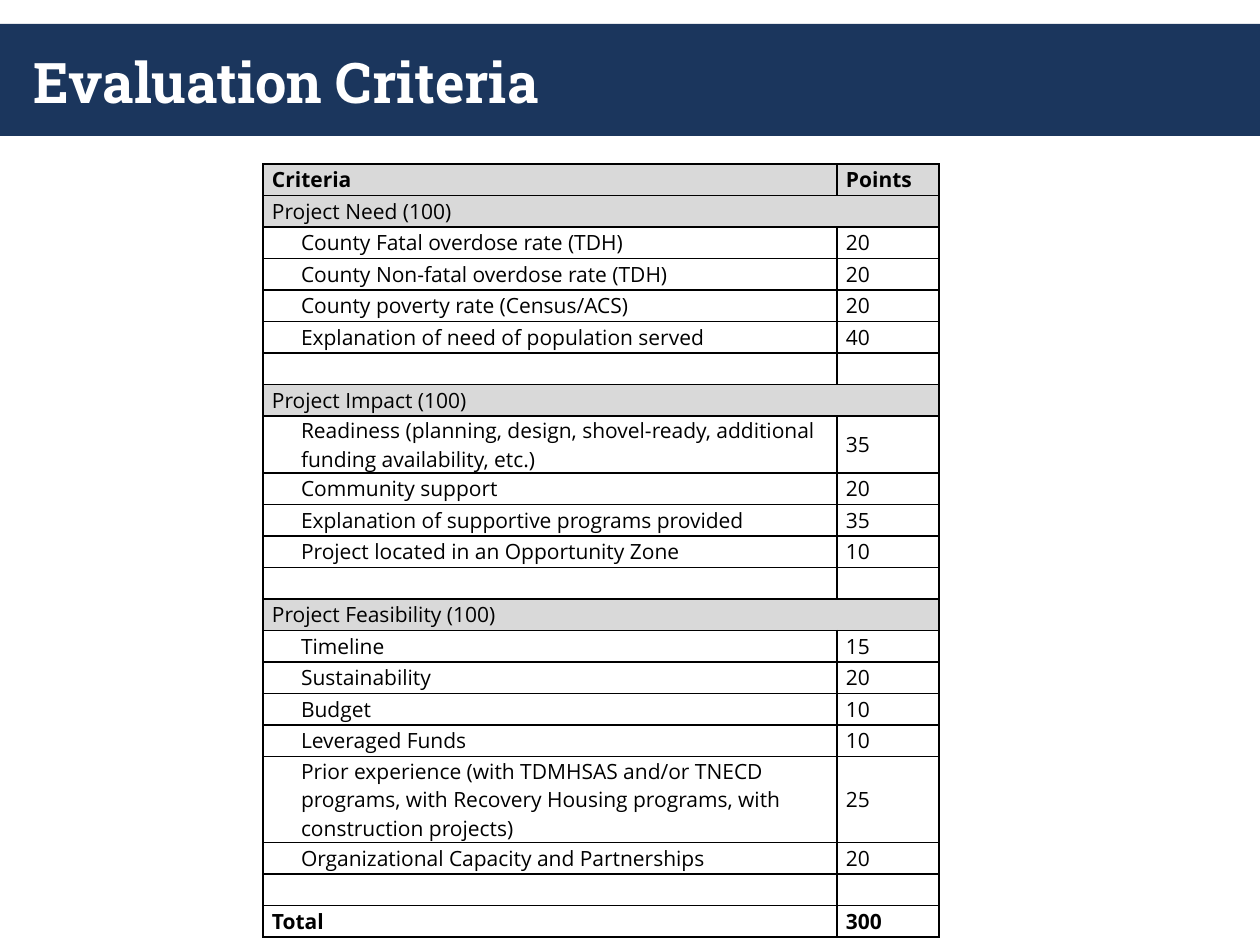
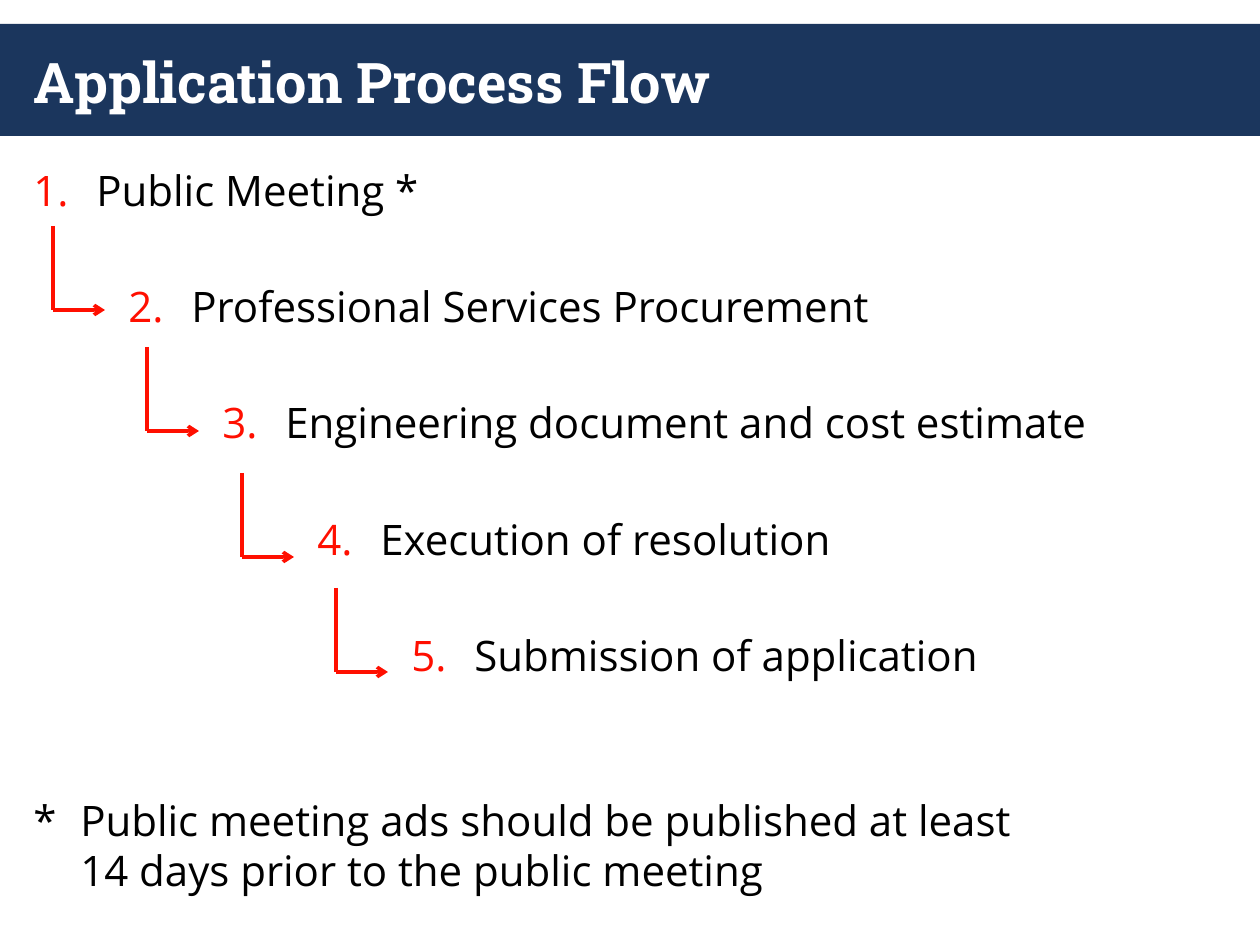
from lxml import etree
from pptx import Presentation
from pptx import util as u
from pptx.dml import color
from pptx.enum import shapes, text
from pptx.oxml import ns

SCALE = 914400 / 126
COLORS = {"navy": "1B365D", "white": "FFFFFF", "black": "000000", "grey": "D9D9D9", "red": "FF0F00"}
HEAD_FONT, BODY_FONT = "Roboto Slab", "Open Sans"

CRITERIA = [
    ("Project Need (100)", [
        ("County Fatal overdose rate (TDH)", 20),
        ("County Non-fatal overdose rate (TDH)", 20),
        ("County poverty rate (Census/ACS)", 20),
        ("Explanation of need of population served", 40),
    ]),
    ("Project Impact (100)", [
        ("Readiness (planning, design, shovel-ready, additional funding availability, etc.)", 35),
        ("Community support", 20),
        ("Explanation of supportive programs provided", 35),
        ("Project located in an Opportunity Zone", 10),
    ]),
    ("Project Feasibility (100)", [
        ("Timeline", 15),
        ("Sustainability", 20),
        ("Budget", 10),
        ("Leveraged Funds", 10),
        ("Prior experience (with TDMHSAS and/or TNECD programs, with Recovery Housing programs, "
         "with construction projects)", 25),
        ("Organizational Capacity and Partnerships", 20),
    ]),
]
WRAPPED_HEIGHTS = {"Readiness": 57, "Prior": 86}
STEPS = [
    "Public Meeting *",
    "Professional Services Procurement",
    "Engineering document and cost estimate",
    "Execution of resolution",
    "Submission of application",
]
ARROW_TOPS = [226, 347, 473, 588]


def px(length):
    return u.Emu(round(length * SCALE))


def rgb(name):
    return color.RGBColor.from_string(COLORS[name])


def child(parent, tag, **attributes):
    return etree.SubElement(parent, ns.qn(tag), attributes)


def write(paragraph, content, size=24, font=BODY_FONT, ink="black", bold=False, align=None,
          left=0, hanging=0, number=None, before=0):
    properties = paragraph._p.get_or_add_pPr()
    properties.set("marL", str(px(left)))
    properties.set("indent", str(-px(hanging)))
    if number:
        child(child(properties, "a:buClr"), "a:srgbClr", val=COLORS[number])
        child(properties, "a:buAutoNum", type="arabicPeriod")
    paragraph.alignment = align
    if before:
        paragraph.space_before = px(before)
    if not content:
        child(child(paragraph._p, "a:endParaRPr", sz=str(size * 100)), "a:latin", typeface=font)
        return
    run = paragraph.add_run()
    run.text = content
    run.font.size = u.Pt(size)
    run.font.name = font
    run.font.bold = bold
    run.font.color.rgb = rgb(ink)


class Deck:
    def __init__(self):
        self.show = Presentation()
        self.show.slide_width, self.show.slide_height = px(1260), px(945)
        self.slide = None

    def add_slide(self, title):
        self.slide = self.show.slides.add_slide(self.show.slide_layouts[6])
        self.band(0, 24, 1260, 112)
        heading = self.box(21, 25, 1218, 113, anchor=text.MSO_ANCHOR.MIDDLE)
        write(heading.paragraphs[0], title, size=32, font=HEAD_FONT, ink="white", bold=True)

    def band(self, *place):
        band = self.slide.shapes.add_shape(shapes.MSO_SHAPE.RECTANGLE, *map(px, place))
        band.shadow.inherit = False
        band.fill.solid()
        band.fill.fore_color.rgb = rgb("navy")
        band.line.fill.background()

    def box(self, *place, anchor=text.MSO_ANCHOR.TOP):
        frame = self.slide.shapes.add_textbox(*map(px, place)).text_frame
        frame.word_wrap = True
        frame.vertical_anchor = anchor
        return frame

    def line(self, *ends, arrow=False):
        line = self.slide.shapes.add_connector(shapes.MSO_CONNECTOR.STRAIGHT, *map(px, ends))
        line.line.color.rgb = rgb("red")
        line.line.width = u.Pt(2)
        if arrow:
            child(line.line._get_or_add_ln(), "a:tailEnd", type="arrow")
        child(line._element.spPr, "a:effectLst")

    def table(self, left, top, widths, height, row_count):
        table = self.slide.shapes.add_table(
            row_count, len(widths), px(left), px(top), px(sum(widths)), px(height)).table
        table.first_row = table.horz_banding = False
        for column, width in zip(table.columns, widths):
            column.width = px(width)
        return table

    def cell(self, cell, content, fill=None, **style):
        cell.margin_left = cell.margin_right = px(9)
        cell.margin_top = cell.margin_bottom = 0
        cell.vertical_anchor = text.MSO_ANCHOR.MIDDLE
        if fill:
            cell.fill.solid()
            cell.fill.fore_color.rgb = rgb(fill)
        else:
            cell.fill.background()
        properties = cell._tc.get_or_add_tcPr()
        for position, side in enumerate(("a:lnL", "a:lnR", "a:lnT", "a:lnB")):
            border = child(properties, side, w=str(u.Pt(1)))
            child(child(border, "a:solidFill"), "a:srgbClr", val=COLORS["black"])
            properties.insert(position, border)
        write(cell.text_frame.paragraphs[0], content, size=12, **style)


def evaluation_criteria(deck):
    deck.add_slide("Evaluation Criteria")
    justified = {"align": text.PP_ALIGN.JUSTIFY}
    rows = [("Criteria", "Points", {"fill": "grey", "bold": True}, justified)]
    for section, items in CRITERIA:
        rows.append((section, None, {"fill": "grey"}, {}))
        rows += [(name, str(points), {}, {"left": 29}) for name, points in items]
        rows.append(("", "", {}, {}))
    rows.append(("Total", "300", {"bold": True}, justified))

    table = deck.table(263, 164, (574, 102), 693, len(rows))
    for index, (name, points, style, name_style) in enumerate(rows):
        first_word = name.partition(" ")[0]
        if first_word in WRAPPED_HEIGHTS:
            table.rows[index].height = px(WRAPPED_HEIGHTS[first_word])
        name_cell, points_cell = table.cell(index, 0), table.cell(index, 1)
        deck.cell(name_cell, name, **style, **name_style)
        deck.cell(points_cell, points, **style, **justified)
        if points is None:
            name_cell.merge(points_cell)


def application_process(deck):
    deck.add_slide("Application Process Flow")
    steps = deck.box(21, 158, 1218, 562)
    for index, step in enumerate(STEPS):
        paragraph = steps.add_paragraph() if index else steps.paragraphs[0]
        write(paragraph, step, left=63 + (index * 189 + 1) // 2, hanging=63, number="red",
              before=66 if index else 0)
    for index, top in enumerate(ARROW_TOPS):
        left, bottom = 53 + index * 189 // 2, top + 84
        deck.line(left, bottom, left + 52, bottom, arrow=True)
        deck.line(left, top, left, bottom)
    footnote = deck.box(21, 788, 1018, 136)
    write(footnote.paragraphs[0],
          "*\tPublic meeting ads should be published at least 14 days prior to the public meeting",
          left=47, hanging=47)


def main():
    deck = Deck()
    evaluation_criteria(deck)
    application_process(deck)
    deck.show.save("out.pptx")


if __name__ == "__main__":
    main()
